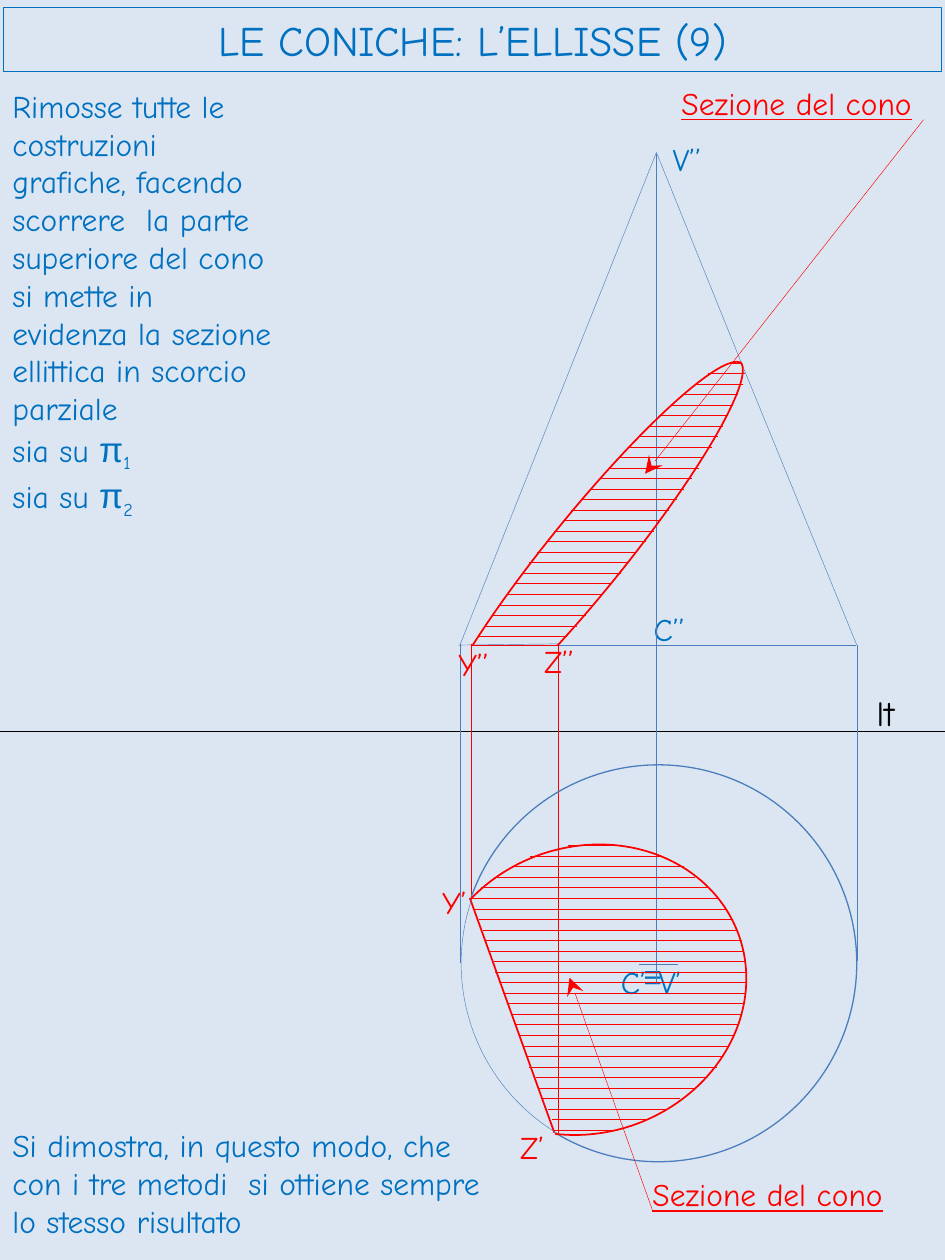
from lxml import etree
from pptx import Presentation
from pptx.dml.color import RGBColor
from pptx.enum.dml import MSO_LINE_DASH_STYLE as DASH
from pptx.enum.shapes import MSO_CONNECTOR, MSO_SHAPE
from pptx.enum.text import MSO_ANCHOR, PP_ALIGN
from pptx.oxml.ns import qn
from pptx.util import Inches, Pt

COLORS = {"bg": "DCE6F2", "text": "0070C0", "line": "4B7EBC", "red": "FF0000", "black": "000000"}
RGB = {name: RGBColor.from_string(value) for name, value in COLORS.items()}
FONT = "Comic Neue"

prs = Presentation()
prs.slide_width, prs.slide_height = Inches(7.5), Inches(10)
s = prs.slides.add_slide(prs.slide_layouts[5])
s.background.fill.solid()
s.background.fill.fore_color.rgb = RGB["bg"]


def add_line(x1, y1, x2, y2, color="line", width=0.25):
    line = s.shapes.add_connector(MSO_CONNECTOR.STRAIGHT, Inches(x1), Inches(y1), Inches(x2), Inches(y2))
    line.line.color.rgb = RGB[color]
    line.line.width = Pt(width)
    etree.SubElement(line._element.spPr, qn("a:effectLst"))
    return line


def add_text(x, y, w, h, text, color="text", size=18, font=FONT):
    box = s.shapes.add_textbox(Inches(x), Inches(y), Inches(w), Inches(h))
    tf = box.text_frame
    tf.word_wrap = True
    tf.text = text
    p = tf.paragraphs[0]
    p.font.name, p.font.size, p.font.color.rgb = font, Pt(size), RGB[color]
    return box


# Title
title = s.shapes.title
title.left, title.top, title.width, title.height = Inches(0.03), Inches(0.06), Inches(7.44), Inches(0.51)
title.line.color.rgb = RGB["text"]
title.line.width = Pt(0.75)
tf = title.text_frame
tf.text = "LE CONICHE: L’ELLISSE (9)"
tf.vertical_anchor = MSO_ANCHOR.MIDDLE
p = tf.paragraphs[0]
p.alignment = PP_ALIGN.CENTER
p.font.name, p.font.size, p.font.color.rgb = FONT, Pt(24), RGB["text"]

# Ground line and blue labels on half-transparent boxes
add_line(0, 5.8, 7.5, 5.8, "black")
for x, y, w, h, label in [(5.09, 4.79, 0.47, 0.31, "C’’"), (4.83, 7.59, 0.43, 0.31, "C’"),
                          (5.24, 1.06, 0.64, 0.4, "V’’")]:
    box = add_text(x, y, w, h, label)
    box.fill.solid()
    box.fill.fore_color.rgb = RGB["bg"]
    color = box.fill._xPr.find(qn("a:solidFill"))[0]
    etree.SubElement(color, qn("a:alpha"), val="50000")
add_text(5.13, 7.59, 0.55, 0.4, "V’")
add_text(5.01, 7.55, 0.43, 0.4, "≡", font="Arial")
add_text(6.86, 5.44, 0.47, 0.44, "lt", "black", 20)

# Cone: sides, base, axis and projection lines
for x1, y1, x2, y2, width in [
    (5.21, 1.21, 3.65, 5.12, 0.25), (5.21, 1.21, 5.88, 2.87, 0.25), (5.88, 2.87, 6.8, 5.12, 0.25),
    (3.75, 5.12, 6.79, 5.12, 0.5), (4.44, 5.11, 3.64, 5.12, 0.25),
    (5.21, 1.22, 5.21, 5.12, 0.25), (5.21, 5.12, 5.21, 7.65, 0.75),
    (3.65, 7.64, 3.65, 5.11, 0.25), (6.8, 7.63, 6.8, 5.12, 0.25),
    (5.07, 7.65, 5.38, 7.65, 0.25), (5.21, 7.49, 5.21, 7.81, 0.25),
]:
    add_line(x1, y1, x2, y2, "line", width)

# Section: projection lines and chords
add_line(3.74, 5.11, 3.74, 7.11, "red")
add_line(4.43, 5.11, 4.43, 9.01, "red")
add_line(3.74, 5.12, 4.42, 5.12, "red")
add_line(3.73, 7.13, 4.4, 8.99, "red", 1)
add_line(3.73, 7.13, 4.4, 8.99, "red").line.dash_style = DASH.DASH

# Hatching: (left, right) of each row, spaced evenly from first to last
upper_rows = [
    (5.79, 5.87), (5.62, 5.91), (5.52, 5.9), (5.42, 5.86), (5.33, 5.82), (5.23, 5.78), (5.15, 5.74),
    (5.06, 5.7), (4.99, 5.65), (4.91, 5.59), (4.83, 5.55), (4.76, 5.49), (4.69, 5.43), (4.61, 5.37),
    (4.53, 5.31), (4.47, 5.24), (4.4, 5.19), (4.33, 5.13), (4.26, 5.05), (4.2, 4.99), (4.14, 4.93),
    (4.08, 4.86), (4.03, 4.77), (3.96, 4.71), (3.91, 4.65), (3.85, 4.58), (3.79, 4.5),
]
lower_rows = [
    (4.51, 4.94), (4.21, 5.25), (4.06, 5.43), (3.92, 5.52), (3.82, 5.62), (3.72, 5.71), (3.76, 5.77),
    (3.8, 5.82), (3.83, 5.84), (3.85, 5.89), (3.88, 5.9), (3.92, 5.92), (3.93, 5.93), (3.96, 5.93),
    (3.99, 5.91), (4.03, 5.91), (4.06, 5.89), (4.09, 5.86), (4.12, 5.83), (4.15, 5.78), (4.18, 5.74),
    (4.2, 5.69), (4.25, 5.6), (4.27, 5.52), (4.29, 5.4), (4.35, 5.29), (4.38, 5.13), (4.39, 4.89),
]
for top, bottom, rows in [(2.88, 5.05, upper_rows), (6.71, 8.97, lower_rows)]:
    pitch = (bottom - top) / (len(rows) - 1)
    for i, (left, right) in enumerate(rows):
        y = top + i * pitch
        add_line(right, y, left, y, "red")

# Arcs of the base circle and the section, with start and end adjustments
for x, y, w, h, turn, start, end, color, width in [
    (3.65, 6.07, 3.15, 3.15, 0, 119.66, 72.55, "line", 0.75),
    (3.66, 6.07, 3.15, 3.15, 0, 72.38, 119.88, "line", 0.25),
    (4.35, 2.45, 0.62, 3.9, 39, 61.48, 162, "red", 1),
    (4.32, 2.43, 0.63, 3.93, 219, 54.14, 148.32, "red", 1),
    (3.38, 6.72, 2.56, 2.27, 340, 142.71, 73.51, "red", 1),
]:
    arc = s.shapes.add_shape(MSO_SHAPE.ARC, Inches(x), Inches(y), Inches(w), Inches(h))
    arc.rotation = turn
    arc.adjustments[0], arc.adjustments[1] = start, end
    arc.fill.background()
    arc.line.color.rgb = RGB[color]
    arc.line.width = Pt(width)
    arc.shadow.inherit = False

# Red point labels
for x, y, w, label in [(3.41, 6.96, 0.41, "Y’"), (4.03, 8.9, 0.42, "Z’"),
                       (4.22, 5.05, 0.47, "Z’’"), (3.54, 5.07, 0.45, "Y’’")]:
    add_text(x, y, w, 0.4, label, "red").text_frame.word_wrap = False

# Callouts with arrows
for x, y, w, arrow in [(5.31, 0.62, 2.29, (7.33, 0.95, 5.12, 3.76)),
                       (5.08, 9.28, 2.66, (5.18, 9.61, 4.52, 7.76))]:
    add_text(x, y, w, 0.4, "Sezione del cono", "red").text_frame.paragraphs[0].font.underline = True
    ln = add_line(*arrow, "red").line._get_or_add_ln()
    etree.SubElement(ln, qn("a:tailEnd"), type="stealth", w="lg", len="lg")

# Explanation and conclusion
box = add_text(0, 0.64, 2.28, 3.8, "Rimosse tutte le costruzioni grafiche, facendo scorrere  la parte superiore "
               "del cono si mette in evidenza la sezione ellittica in scorcio parziale")
for plane in "12":
    p = box.text_frame.add_paragraph()
    p.font.name, p.font.size, p.font.color.rgb = FONT, Pt(18), RGB["text"]
    p.add_run().text = "sia su "
    r = p.add_run()
    r.text = "π"
    r.font.name, r.font.size = "Arial", Pt(20)
    r = p.add_run()
    r.text = plane
    r.font._element.set("baseline", "-25000")
add_text(0, 8.89, 3.96, 1.01, "Si dimostra, in questo modo, che con i tre metodi  si ottiene sempre "
         "lo stesso risultato")

prs.save("out.pptx")
